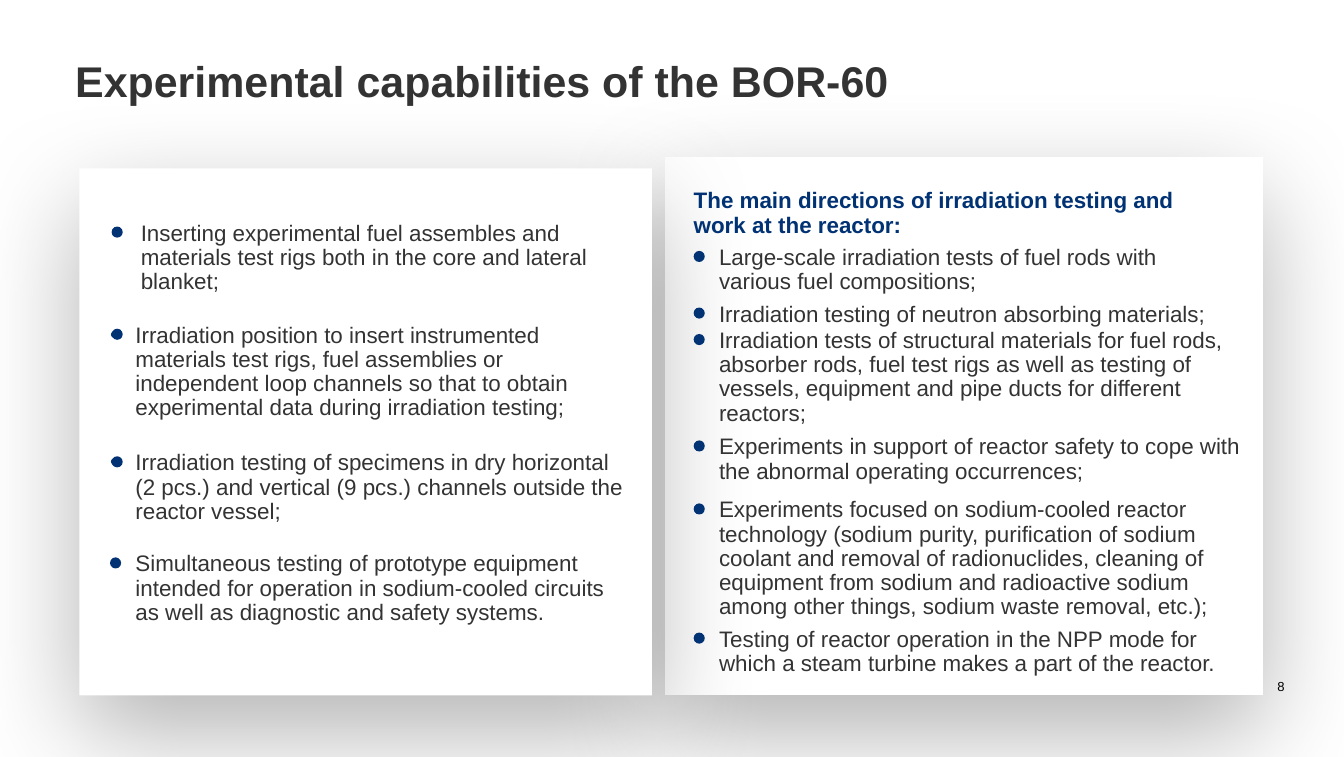
"""Build the slide on the experimental capabilities of the BOR-60."""
from dataclasses import dataclass
from typing import Any, NamedTuple

from lxml.etree import SubElement
from pptx import Presentation
from pptx.dml.color import RGBColor
from pptx.enum.shapes import MSO_SHAPE as Preset
from pptx.enum.text import MSO_ANCHOR as Anchor, MSO_AUTO_SIZE as AutoSize, PP_ALIGN as Align
from pptx.oxml.ns import qn
from pptx.util import Cm, Pt


@dataclass(frozen=True)
class Theme:
    """Colours, type sizes and shared lengths."""
    face: str = "Arial"
    ink: str = "333333"
    navy: str = "003274"
    paper: str = "FFFFFF"
    black: str = "000000"
    title_size: float = 23
    body_size: float = 12
    number_size: float = 7
    indent: float = 0.48
    dot: float = 0.21
    dot_drop: float = 0.09


class Area(NamedTuple):
    """Left, top, width and height in centimetres."""
    left: float
    top: float
    width: float
    height: float


class Item(NamedTuple):
    """One bulleted statement, its place and the left edge of its dot."""
    area: Area
    dot_left: float
    text: str


THEME = Theme()
PANELS = [Area(12.57, 2.97, 11.3, 10.16), Area(1.5, 3.18, 10.82, 9.96)]
ITEMS = [
    Item(Area(2.18, 4.19, 9.45, 1.37), 2.11,
         "Inserting experimental fuel assembles and materials test rigs both in the core "
         "and lateral blanket;"),
    Item(Area(2.08, 6.12, 9.32, 1.85), 2.11,
         "Irradiation position to insert instrumented materials test rigs, fuel assemblies or "
         "independent loop channels so that to obtain experimental data during irradiation testing;"),
    Item(Area(2.08, 8.53, 9.75, 1.32), 2.11,
         "Irradiation testing of specimens in dry horizontal (2 pcs.) and vertical (9 pcs.) "
         "channels outside the reactor vessel;"),
    Item(Area(2.08, 10.44, 9.68, 1.32), 2.08,
         "Simultaneous testing of prototype equipment intended for operation in sodium-cooled "
         "circuits as well as diagnostic and safety systems."),
    Item(Area(13.11, 4.65, 10.24, 0.91), 13.11,
         "Large-scale irradiation tests of fuel rods with various fuel compositions;"),
    Item(Area(13.11, 5.72, 10.8, 0.38), 13.11,
         "Irradiation testing of neutron absorbing materials;"),
    Item(Area(13.11, 6.22, 10.8, 1.85), 13.11,
         "Irradiation tests of structural materials for fuel rods, absorber rods, fuel test rigs "
         "as well as testing of vessels, equipment and pipe ducts for different reactors;"),
    Item(Area(13.11, 8.23, 10.36, 1.07), 13.11,
         "Experiments in support of reactor safety to cope with the abnormal operating occurrences;"),
    Item(Area(13.11, 9.42, 10.36, 2.31), 13.11,
         "Experiments focused on sodium-cooled reactor technology (sodium purity, purification of "
         "sodium coolant and removal of radionuclides, cleaning of equipment from sodium and "
         "radioactive sodium among other things, sodium waste removal, etc.);"),
    Item(Area(13.11, 11.86, 10.24, 0.86), 13.11,
         "Testing of reactor operation in the NPP mode for which a steam turbine makes a part "
         "of the reactor."),
]


def apply(target: Any, values: dict[str, Any]) -> None:
    """Set each named attribute on the target."""
    for name, value in values.items():
        setattr(target, name, value)


def lengths(area: Area) -> list[Cm]:
    """Turn an area into slide lengths."""
    return [Cm(value) for value in area]


def set_bullet(para: Any, bulleted: bool) -> None:
    """Give the paragraph a hanging round bullet or none at all."""
    props = para._p.get_or_add_pPr()
    indent = Cm(THEME.indent) if bulleted else 0
    props.set("marL", str(indent))
    props.set("indent", str(-indent))
    if bulleted:
        colour = SubElement(props, qn("a:buClr"))
        SubElement(colour, qn("a:srgbClr"), val=THEME.navy)
        SubElement(props, qn("a:buFont"), typeface=THEME.face)
        SubElement(props, qn("a:buChar"), char="•")
    else:
        SubElement(props, qn("a:buNone"))


def write(box: Any, area: Area, text: str, size: float, colour: str, bold: bool = False,
          bulleted: bool = False, align: Any = Align.LEFT, anchor: Any = Anchor.TOP) -> None:
    """Place a text holder and fill it with one formatted paragraph."""
    apply(box, dict(zip(("left", "top", "width", "height"), lengths(area))))
    frame = box.text_frame
    apply(frame, {"word_wrap": True, "auto_size": AutoSize.NONE, "vertical_anchor": anchor,
                  "margin_left": 0, "margin_top": 0, "margin_right": 0, "margin_bottom": 0})
    para = frame.paragraphs[0]
    set_bullet(para, bulleted)
    apply(para, {"alignment": align, "line_spacing": 0.9, "space_before": Pt(0)})
    span = para.add_run()
    span.text = text
    apply(span.font, {"name": THEME.face, "size": Pt(size), "bold": bold})
    span.font.color.rgb = RGBColor.from_string(colour)


def draw_shape(page: Any, preset: Any, area: Area, colour: str) -> Any:
    """Draw a flat filled shape without outline."""
    shape = page.shapes.add_shape(preset, *lengths(area))
    shape.shadow.inherit = False
    shape.fill.solid()
    shape.fill.fore_color.rgb = RGBColor.from_string(colour)
    shape.line.fill.background()
    return shape


def draw_panel(page: Any, area: Area) -> None:
    """Draw a white panel with a soft shadow below it."""
    panel = draw_shape(page, Preset.RECTANGLE, area, THEME.paper)
    effects = panel._element.spPr.find(qn("a:effectLst"))
    shadow = SubElement(effects, qn("a:outerShdw"), blurRad=str(Pt(60)), dist=str(Pt(20)),
                        dir="5400000", algn="ctr", rotWithShape="0")
    colour = SubElement(shadow, qn("a:srgbClr"), val=THEME.black)
    SubElement(colour, qn("a:alpha"), val="30000")


def add_box(page: Any) -> Any:
    """Add an empty text box to be placed later."""
    return page.shapes.add_textbox(0, 0, 0, 0)


def main() -> None:
    """Assemble and save the deck."""
    deck = Presentation()
    apply(deck, {"slide_width": Cm(25.4), "slide_height": Cm(14.3)})
    page = deck.slides.add_slide(deck.slide_layouts[3])
    title, first_body, heading = page.placeholders
    for panel in PANELS:
        draw_panel(page, panel)
    for holder in (title, first_body, heading):
        page.shapes._spTree.append(holder._element)

    write(title, Area(1.42, 1.14, 18.24, 0.91), "Experimental capabilities of the BOR-60",
          THEME.title_size, THEME.ink, bold=True)
    write(heading, Area(13.11, 3.58, 10.11, 0.91),
          "The main directions of irradiation testing and work at the reactor:",
          THEME.body_size, THEME.navy, bold=True)
    for index, item in enumerate(ITEMS):
        box = add_box(page) if index else first_body
        write(box, item.area, item.text, THEME.body_size, THEME.ink, bulleted=True)
    for item in ITEMS:
        dot = Area(item.dot_left, item.area.top + THEME.dot_drop, THEME.dot, THEME.dot)
        draw_shape(page, Preset.OVAL, dot, THEME.navy)
    write(add_box(page), Area(22.73, 12.73, 1.55, 0.38), "8", THEME.number_size, THEME.black,
          align=Align.RIGHT, anchor=Anchor.BOTTOM)
    deck.save("out.pptx")


if __name__ == "__main__":
    main()
